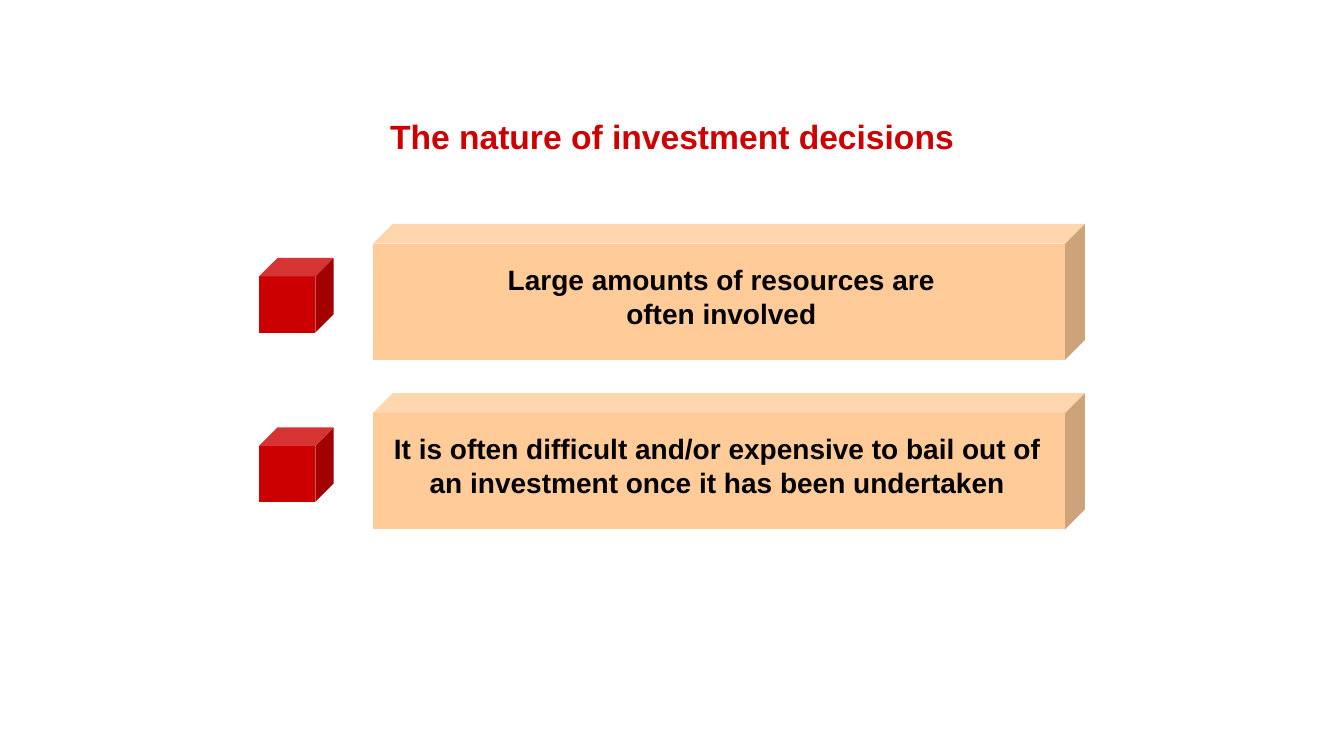
"""Build a slide on the nature of investment decisions."""
from pptx import Presentation
from pptx.dml.color import RGBColor
from pptx.enum.shapes import MSO_SHAPE
from pptx.enum.text import PP_ALIGN
from pptx.util import Inches, Pt

CUBE = MSO_SHAPE.CUBE
CENTER = PP_ALIGN.CENTER

TITLE = "The nature of investment decisions"
POINTS = [
    ("Large amounts of resources are often involved", 4.87, 4.57),
    ("It is often difficult and/or expensive to bail out of "
     "an investment once it has been undertaken", 3.69, 6.85),
]
COLORS = {"red": "CC0000", "peach": "FFCC99", "black": "000000"}
FONT = "Arial"
TOP, PITCH = 2.22, 1.68
BAR_X, BAR_W, BAR_H = 3.7, 7.06, 1.35
MARK_X, MARK_DY, MARK = 2.57, 0.34, 0.74
TEXT_DY, TEXT_H = 0.335, 0.78


def color(name):
    return RGBColor.from_string(COLORS[name])


def add_cube(slide, box, depth, fill):
    cube = slide.shapes.add_shape(CUBE, *map(Inches, box))
    cube.adjustments[0] = depth
    cube.shadow.inherit = False
    cube.fill.solid()
    cube.fill.fore_color.rgb = color(fill)
    cube.line.fill.background()


def add_text(slide, box, text, size, tint):
    frame = slide.shapes.add_textbox(*map(Inches, box)).text_frame
    frame.word_wrap = True
    para = frame.paragraphs[0]
    para.text = text
    para.alignment = CENTER
    para.font.name = FONT
    para.font.size = Pt(size)
    para.font.bold = True
    para.font.color.rgb = color(tint)


def main():
    deck = Presentation()
    deck.slide_width, deck.slide_height = Inches(13.33), Inches(7.5)
    slide = deck.slides.add_slide(deck.slide_layouts[6])
    add_text(slide, (2.04, 1.1, 9.25, 0.5), TITLE, 24, "red")
    for row, (text, left, width) in enumerate(POINTS):
        top = TOP + row * PITCH
        add_cube(slide, (BAR_X, top, BAR_W, BAR_H), 0.145, "peach")
        add_text(slide, (left, top + TEXT_DY, width, TEXT_H), text, 20, "black")
        add_cube(slide, (MARK_X, top + MARK_DY, MARK, MARK), 0.247, "red")
    deck.save("out.pptx")


if __name__ == "__main__":
    main()
